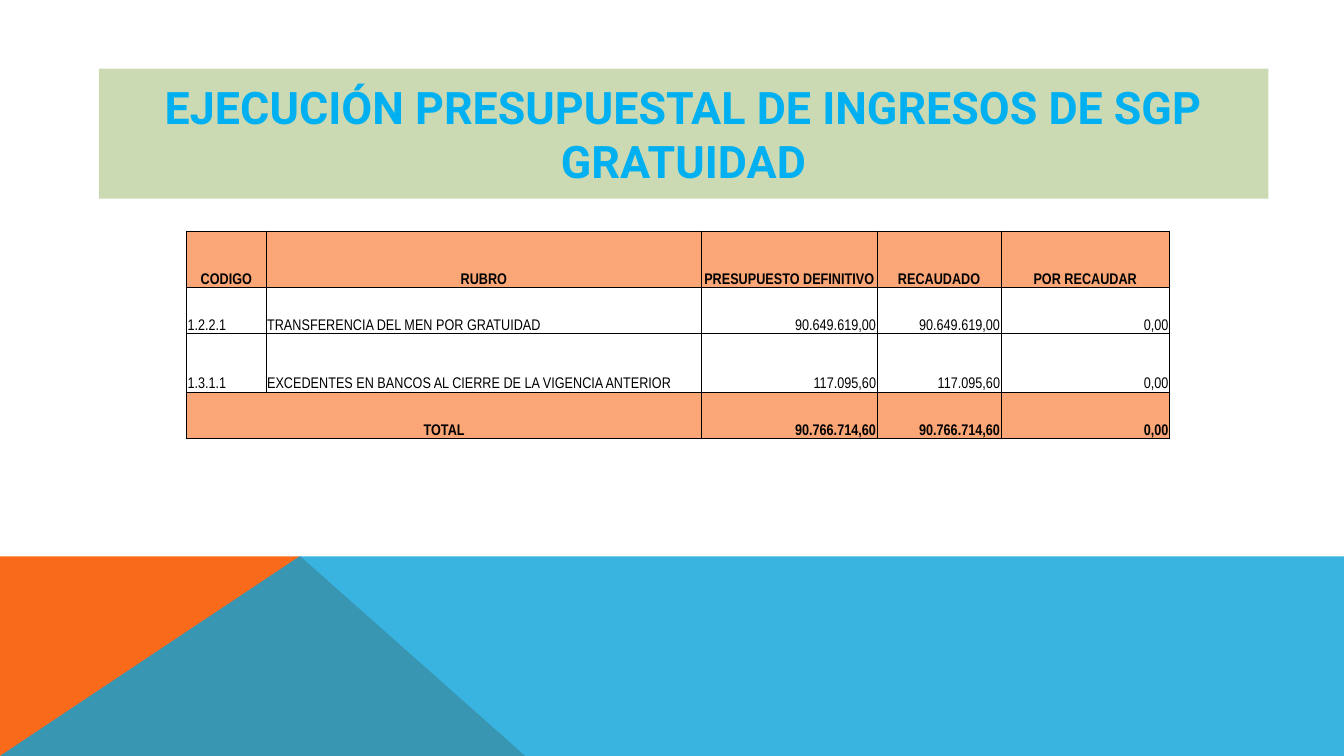
from lxml import etree
from pptx import Presentation
from pptx.dml.color import RGBColor
from pptx.enum.shapes import MSO_SHAPE
from pptx.enum.text import MSO_ANCHOR, PP_ALIGN
from pptx.oxml.ns import qn
from pptx.util import Inches, Pt

RECT = MSO_SHAPE.RECTANGLE
MIDDLE, BOTTOM = MSO_ANCHOR.MIDDLE, MSO_ANCHOR.BOTTOM
LEFT, CENTER, RIGHT = PP_ALIGN.LEFT, PP_ALIGN.CENTER, PP_ALIGN.RIGHT

COLORS = {
    "orange": "F96A1B",
    "blue": "08A1D9",
    "banner": "CCDAB3",
    "title": "00B0F0",
    "band": "FBA676",
    "black": "000000",
}

COLUMNS = [0.79, 4.32, 1.74, 1.23, 1.67]
HEIGHTS = [0.56, 0.46, 0.58, 0.46]
BUDGET = [
    ["CODIGO", "RUBRO", "PRESUPUESTO DEFINITIVO", "RECAUDADO", "POR RECAUDAR"],
    ["1.2.2.1", "TRANSFERENCIA DEL MEN POR GRATUIDAD",
     "90.649.619,00", "90.649.619,00", "0,00"],
    ["1.3.1.1", "EXCEDENTES EN BANCOS AL CIERRE DE LA VIGENCIA ANTERIOR",
     "117.095,60", "117.095,60", "0,00"],
    ["TOTAL", "", "90.766.714,60", "90.766.714,60", "0,00"],
]


class Deck:
    """Holds the style and the current slide, and draws each kind of element."""

    def __init__(self, prs):
        self.slide = prs.slides.add_slide(prs.slide_layouts[6])
        self.title_font, self.table_font = "Roboto", "Arial Narrow"

    def color(self, name):
        return RGBColor.from_string(COLORS[name])

    def paint(self, s, fill):
        s.shadow.inherit = False
        s.fill.solid()
        s.fill.fore_color.rgb = self.color(fill)
        s.line.fill.background()

    def text(self, tf, text, font, size, color, align, bold):
        tf.text = text
        p = tf.paragraphs[0]
        p.alignment = align
        for r in p.runs:
            r.font.name, r.font.size, r.font.bold = font, Pt(size), bold
            r.font.color.rgb = self.color(color)

    def polygon(self, points, fill, alpha=None):
        points = [(Inches(x), Inches(y)) for x, y in points]
        builder = self.slide.shapes.build_freeform(*points[0])
        builder.add_line_segments(points[1:], close=True)
        s = builder.convert_to_shape()
        self.paint(s, fill)
        if alpha:
            clr = s.fill._xPr.find(qn("a:solidFill"))[0]
            etree.SubElement(clr, qn("a:alpha"), val=str(alpha * 1000))

    def banner(self, x, y, w, h, text):
        s = self.slide.shapes.add_shape(
            RECT, Inches(x), Inches(y), Inches(w), Inches(h))
        self.paint(s, "banner")
        tf = s.text_frame
        tf.word_wrap = True
        tf.vertical_anchor = MIDDLE
        self.text(tf, text, self.title_font, 32, "title", CENTER, True)

    def borders(self, cell):
        tcPr = cell._tc.get_or_add_tcPr()
        for i, side in enumerate(("lnL", "lnR", "lnT", "lnB")):
            ln = etree.Element(qn("a:" + side), w=str(Pt(0.5)))
            fill = etree.SubElement(ln, qn("a:solidFill"))
            etree.SubElement(fill, qn("a:srgbClr"), val=COLORS["black"])
            tcPr.insert(i, ln)

    def cell(self, cell, text, align, band):
        cell.margin_left = cell.margin_right = cell.margin_top = Inches(0.01)
        cell.margin_bottom = 0
        cell.vertical_anchor = BOTTOM
        self.text(cell.text_frame, text, self.table_font, 11, "black", align, band)
        if band:
            cell.fill.solid()
            cell.fill.fore_color.rgb = self.color("band")
        else:
            cell.fill.background()
        self.borders(cell)

    def table(self, x, y, widths, heights, rows):
        t = self.slide.shapes.add_table(
            len(rows), len(widths), Inches(x), Inches(y),
            Inches(sum(widths)), Inches(sum(heights))).table
        t.first_row = t.horz_banding = False
        for column, width in zip(t.columns, widths):
            column.width = Inches(width)
        last = len(rows) - 1
        for i, values in enumerate(rows):
            t.rows[i].height = Inches(heights[i])
            for j, value in enumerate(values):
                band = i in (0, last)
                if i == 0 or (band and j < 2):
                    align = CENTER
                else:
                    align = LEFT if j < 2 else RIGHT
                self.cell(t.cell(i, j), value, align, band)
        t.cell(last, 0).merge(t.cell(last, 1))


def main():
    prs = Presentation()
    prs.slide_width, prs.slide_height = Inches(13.33), Inches(7.5)
    deck = Deck(prs)
    deck.polygon([(0, 7.5), (0, 5.52), (2.98, 5.52), (5.21, 7.5)], "orange")
    deck.polygon([(0, 7.5), (2.97, 5.52), (13.33, 5.52), (13.33, 7.5)], "blue", 80)
    deck.banner(0.98, 0.68, 11.6, 1.29,
                "EJECUCIÓN PRESUPUESTAL DE INGRESOS DE SGP GRATUIDAD")
    deck.table(1.85, 2.29, COLUMNS, HEIGHTS, BUDGET)
    prs.save("out.pptx")


if __name__ == "__main__":
    main()
